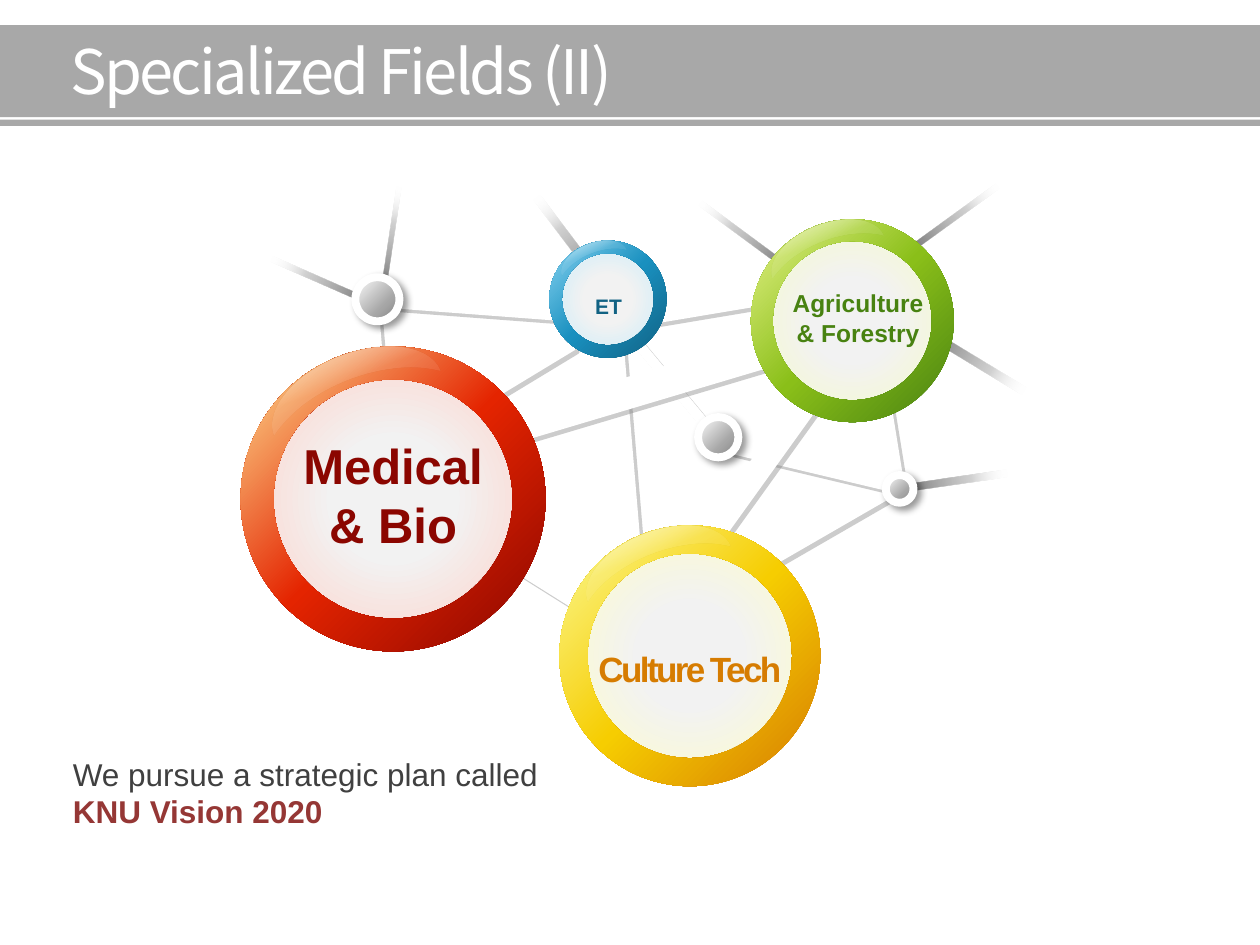
from lxml import etree
from pptx import Presentation
from pptx.dml.color import RGBColor
from pptx.enum.shapes import MSO_SHAPE
from pptx.enum.text import MSO_ANCHOR, PP_ALIGN
from pptx.oxml import parse_xml
from pptx.oxml.ns import nsdecls, qn
from pptx.util import Inches, Pt

TITLE_FONT = "Noto Sans CJK KR"
BODY_FONT = "Arial"
SPOKE_STOPS = [(0, "808080", 100), (54, "A6A6A6", 51), (86, "FFFFFF", 0)]
HUB_STOPS = [(0, "808080", 100), (35, "A6A6A6", 100), (100, "FFFFFF", 100)]
GLOSS_STOPS = [(0, "FFFFFF", 90), (50, "FFFFFF", 10), (100, "FFFFFF", 0)]

# Each bar: left, top, width, height, rotation (inches from the web's corner, degrees)
OUTLINED_BARS = [
    (4.36, 2.43, 0.05, 1.73, 60), (2.9, 1.71, 0.1, 1.72, 175.2),
    (3.72, 0.56, 0.06, 1.73, 80.5), (1.88, 0.6, 0.04, 1.73, 94.3),
    (5.02, 2, 0.06, 0.76, 170.8), (3.29, 1.59, 0.04, 0.87, 140.2),
    (4.43, 2.05, 0.04, 1.33, 103.4), (2.14, 1.53, 0.04, 0.89, 58.8),
]
LOWER_BAR = (2.34, 3.05, 0.15, 1.22, 122.1)
HUB_BAR = (0.96, 1.51, 0.07, 0.46, 175.2)
LONG_BARS = [(3.03, 0.83, 0.25, 2.48, 73.4), (3.98, 1.79, 0.19, 1.73, 35.7)]
SPOKES = [
    (5.62, 0.23, 0.05, 0.89, 54.3), (5.8, 1.48, 0.07, 0.89, 120.9),
    (3.8, 0.37, 0.05, 0.88, 306.1), (2.43, 0.4, 0.07, 0.88, 323.2),
    (1.1, 0.36, 0.04, 0.88, 8.3), (0.43, 0.75, 0.05, 0.88, 293.5),
    (5.64, 2.36, 0.06, 0.88, 82),
]
HUBS = [(0.82, 1.2, 0.35), (3.54, 2.31, 0.32), (5.03, 2.77, 0.22)]


def rgb(value):
    return RGBColor.from_string(value)


def color_xml(value, opacity):
    return f'<a:srgbClr val="{value}"><a:alpha val="{opacity * 1000}"/></a:srgbClr>'


def solid(value, opacity=100):
    return f'<a:solidFill {nsdecls("a")}>{color_xml(value, opacity)}</a:solidFill>'


def gradient(stops, angle=None):
    """Linear gradient at an angle, or one spreading from the centre without it."""
    stop_xml = "".join(f'<a:gs pos="{pos * 1000}">{color_xml(value, opacity)}</a:gs>'
                       for pos, value, opacity in stops)
    if angle is None:
        shade = ('<a:path path="circle"><a:fillToRect l="50000" t="50000" '
                 'r="50000" b="50000"/></a:path>')
    else:
        shade = f'<a:lin ang="{angle * 60000}" scaled="0"/>'
    return (f'<a:gradFill {nsdecls("a")} rotWithShape="1">'
            f'<a:gsLst>{stop_xml}</a:gsLst>{shade}</a:gradFill>')


def add_figure(shapes, kind, left, top, width, height, fill, rotation=0, outline=0):
    figure = shapes.add_shape(kind, Inches(left), Inches(top), Inches(width), Inches(height))
    figure.rotation = rotation
    figure.shadow.inherit = False
    figure.fill.background()
    properties = figure._element.spPr
    properties.replace(properties.find(qn("a:noFill")), parse_xml(fill))
    if outline:
        figure.line.color.rgb = rgb("FFFFFF")
        figure.line.width = Pt(outline)
    else:
        figure.line.fill.background()
    return figure


def cast_shadow(figure, value, blur):
    effects = figure._element.spPr.find(qn("a:effectLst"))
    shadow = etree.SubElement(effects, qn("a:outerShdw"), blurRad=str(Pt(blur)),
                              dist=str(Pt(3)), dir=str(45 * 60000), algn="tl",
                              rotWithShape="0")
    shadow.append(parse_xml(color_xml(value, 40).replace(
        "<a:srgbClr", f'<a:srgbClr {nsdecls("a")}', 1)))


def add_text(page, left, top, width, height):
    box = page.shapes.add_textbox(Inches(left), Inches(top), Inches(width), Inches(height))
    box.text_frame.word_wrap = True
    return box.text_frame


def style_font(font, name, size, value, bold=False):
    font.name, font.size, font.bold = name, Pt(size), bold
    font.color.rgb = rgb(value)


def tighten(para):
    """Draw the letters of each run 1.5 points closer."""
    for span in para.runs:
        span._r.get_or_add_rPr().set("spc", "-150")


def add_header(page, left, top, width):
    for offset, height in ((0, 0.73), (0.75, 0.05)):
        add_figure(page.shapes, MSO_SHAPE.RECTANGLE, left, top + offset, width, height,
                   solid("404040", 45))
    frame = add_text(page, left + 0.46, top + 0.05, width - 0.87, 0.61)
    frame.vertical_anchor = MSO_ANCHOR.MIDDLE
    para = frame.paragraphs[0]
    para.text = "Specialized Fields (II)"
    style_font(para.font, TITLE_FONT, 35, "FFFFFF")
    tighten(para)


def add_statement(page, left, top, width, height):
    para = add_text(page, left, top, width, height).paragraphs[0]
    for text, value, bold in (("We pursue a strategic plan called ", "404040", False),
                              ("KNU Vision 2020", "953735", True)):
        span = para.add_run()
        span.text = text
        style_font(span.font, BODY_FONT, 18, value, bold)


def add_web(page, left, top):
    """Links, fading spokes and small hubs behind the large nodes."""
    shapes = page.shapes.add_group_shape().shapes

    def add_bar(bar, fill, outline=0):
        x, y, width, height, rotation = bar
        return add_figure(shapes, MSO_SHAPE.RECTANGLE, left + x, top + y, width, height,
                          fill, rotation, outline)

    def add_link(bar, outline=0):
        cast_shadow(add_bar(bar, solid("FFFFFF"), outline), "808080", 0)

    add_link(OUTLINED_BARS[0], 3)
    add_link(LOWER_BAR)
    for bar in OUTLINED_BARS[1:]:
        add_link(bar, 3)
    for bar in SPOKES:
        add_bar(bar, gradient(SPOKE_STOPS, 270))
    add_link(HUB_BAR)
    for x, y, size in HUBS:
        hub = add_figure(shapes, MSO_SHAPE.OVAL, left + x, top + y, size, size,
                         gradient(HUB_STOPS, 225), outline=4.5)
        cast_shadow(hub, "000000", 4)
    for bar in LONG_BARS:
        add_link(bar)


def add_node(page, left, top, size, ring, glow):
    """Glossy ring, shaded from its dark to its light colour, round a pale disc."""
    shapes = page.shapes.add_group_shape().shapes
    disc = 0.81 * size
    margin = (size - disc) / 2
    add_figure(shapes, MSO_SHAPE.OVAL, left + margin, top + margin, disc, disc,
               gradient([(35, "F2F2F2", 100), (100, glow, 100)]))
    stops = [(pos, value, 100) for pos, value in zip((0, 50, 100), ring)]
    donut = add_figure(shapes, MSO_SHAPE.DONUT, left, top, size, size, gradient(stops, 225))
    donut.adjustments[0] = 0.108
    add_figure(shapes, MSO_SHAPE.MOON, left + 0.27 * size, top - 0.18 * size,
               0.165 * size, 0.583 * size, gradient(GLOSS_STOPS, 0), rotation=68.9)


def add_label(page, box, lines, size, value, spacing=None, tight=False):
    frame = add_text(page, *box)
    frame.text = "\n".join(lines)
    for para in frame.paragraphs:
        para.alignment = PP_ALIGN.CENTER
        if spacing:
            para.line_spacing = spacing
        style_font(para.font, BODY_FONT, size, value, bold=True)
        if tight:
            tighten(para)


def main():
    deck = Presentation()
    deck.slide_width, deck.slide_height = Inches(10), Inches(7.5)
    page = deck.slides.add_slide(deck.slide_layouts[6])
    add_header(page, 0, 0.2, 10)
    add_statement(page, 0.48, 5.94, 3.89, 0.71)
    add_web(page, 2, 1)
    add_node(page, 1.91, 2.75, 2.42, ("8B0600", "E42400", "FEE396"), "FFD2C9")
    add_label(page, (2.09, 3.41, 2.06, 1.04), ["Medical", "& Bio"], 28, "8B0600")
    add_node(page, 4.36, 1.91, 0.93, ("116283", "1990BF", "88D4F2"), "CEEDFA")
    add_label(page, (4.14, 2.18, 1.38, 0.37), ["ET"], 12, "116283", spacing=1.5)
    add_node(page, 5.96, 1.74, 1.61, ("488211", "8ABF19", "E5F288"), "F5FACE")
    add_label(page, (6.12, 2.24, 1.38, 0.57), ["Agriculture & Forestry"], 14, "488211")
    add_node(page, 4.44, 4.17, 2.07, ("D67C01", "F6CD01", "FBF995"), "FDFCCB")
    add_label(page, (4.59, 4.92, 1.77, 0.54), ["Culture Tech"], 20, "D67C01",
              spacing=1.5, tight=True)
    deck.save("out.pptx")


if __name__ == "__main__":
    main()
